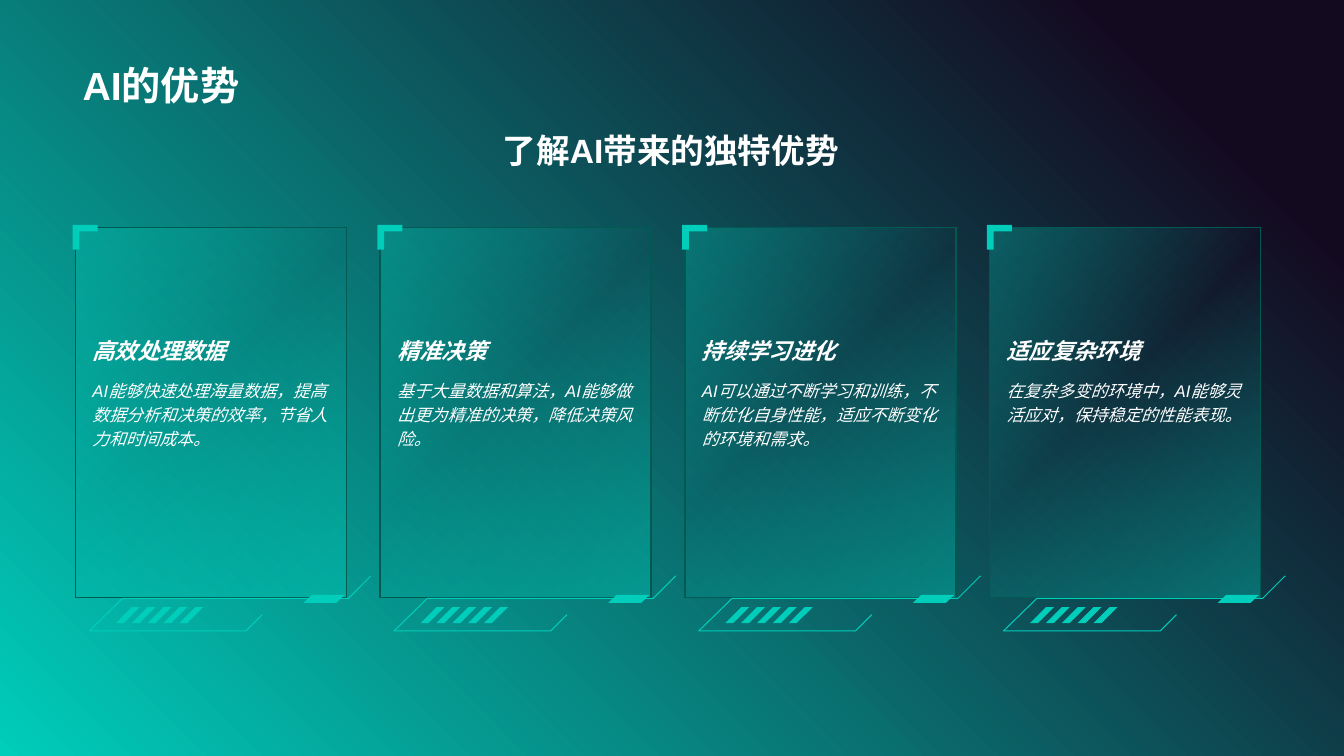
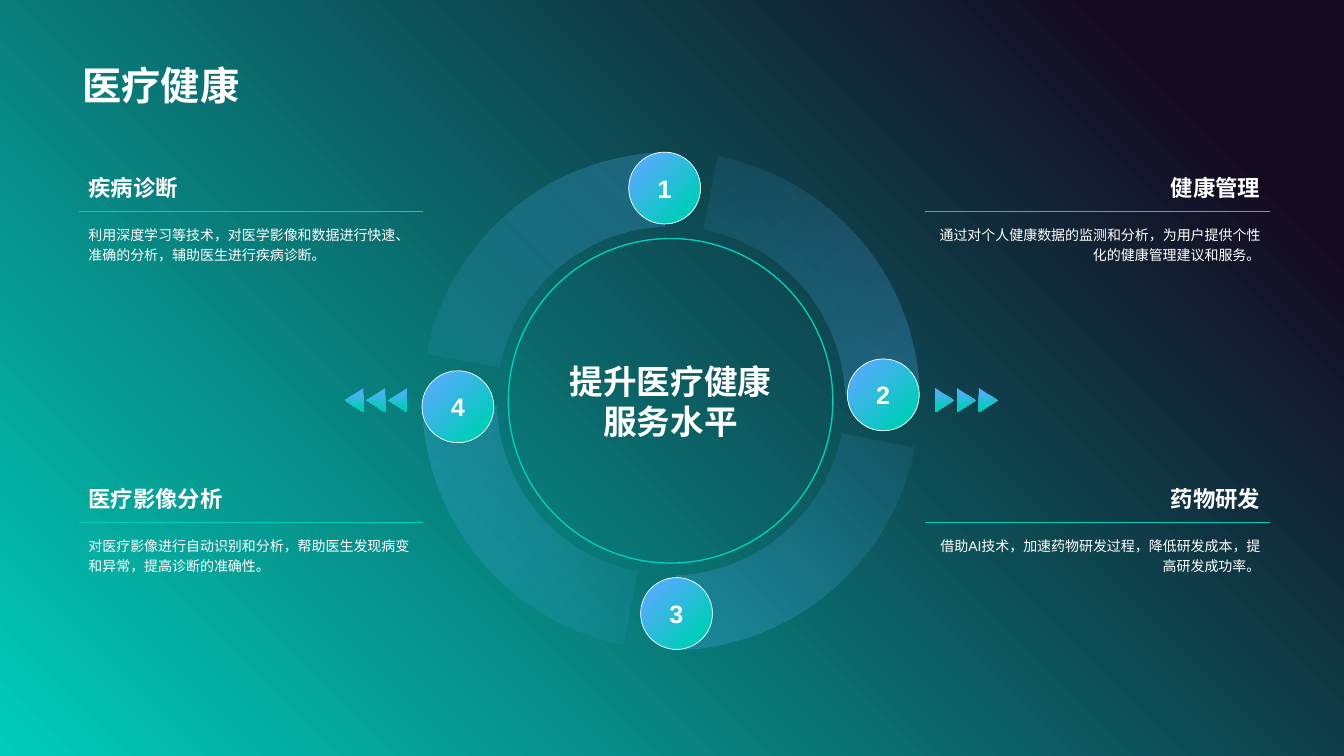
"""Build two dark teal slides: the advantages of AI and AI in health care."""
from lxml import etree
from pptx import Presentation
from pptx import util as u
from pptx.dml.color import RGBColor
from pptx.enum import shapes, text
from pptx.oxml.ns import qn

TEAL, BLUE, NIGHT, FOREST, WHITE = "00CDBA", "4BB0F4", "140A20", "005A52", "FFFFFF"
FONT, CENTER_FONT = "Arial", "Noto Sans CJK SC"
LEFT, CENTER, RIGHT = text.PP_ALIGN.LEFT, text.PP_ALIGN.CENTER, text.PP_ALIGN.RIGHT
TOP, MIDDLE, BOTTOM = (text.MSO_ANCHOR.TOP, text.MSO_ANCHOR.MIDDLE,
                       text.MSO_ANCHOR.BOTTOM)

BACKGROUND = [(0, TEAL, 100), (88, NIGHT, 100)]
CARD_GLOW = [(0, TEAL, 39), (55, TEAL, 0), (100, TEAL, 32)]
ARC_FADE = [(10, BLUE, 0), (100, BLUE, 40)]
BLUE_TO_TEAL = [(22, BLUE, 100), (81, TEAL, 100)]

ADVANTAGES_TITLE = "AI的优势"
ADVANTAGES_SUBTITLE = "了解AI带来的独特优势"
ADVANTAGES = [
    ("高效处理数据", "AI能够快速处理海量数据，提高数据分析和决策的效率，节省人力和时间成本。"),
    ("精准决策", "基于大量数据和算法，AI能够做出更为精准的决策，降低决策风险。"),
    ("持续学习进化", "AI可以通过不断学习和训练，不断优化自身性能，适应不断变化的环境和需求。"),
    ("适应复杂环境", "在复杂多变的环境中，AI能够灵活应对，保持稳定的性能表现。"),
]
HEALTH_TITLE = "医疗健康"
HEALTH_CENTER = "提升医疗健康服务水平"
HEALTH_TOPICS = [
    ("疾病诊断", "利用深度学习等技术，对医学影像和数据进行快速、准确的分析，辅助医生进行疾病诊断。", 0, 0),
    ("健康管理", "通过对个人健康数据的监测和分析，为用户提供个性化的健康管理建议和服务。", 1, 0),
    ("药物研发", "借助AI技术，加速药物研发过程，降低研发成本，提高研发成功率。", 1, 1),
    ("医疗影像分析", "对医疗影像进行自动识别和分析，帮助医生发现病变和异常，提高诊断的准确性。", 0, 1),
]

CARD_LEFT, CARD_PITCH, CARD_TOP, CARD_WIDTH, CARD_HEIGHT = 1.9, 7.68, 5.74, 6.83, 9.32
STRIPE = [(0.2, 0.4), (0, 0.4), (0.4, 0), (0.6, 0)]
TAB = [(0.83, 0.2), (0, 0.2), (0.21, 0), (1.04, 0)]
RAIL = [(4.71, 15.49), (4.3, 15.9), (0.35, 15.9), (1.19, 15.08), (6.88, 15.08), (7.45, 14.51)]
CORNER = [(0.56, 0), (0, 0), (0, 0.62), (0.17, 0.62), (0.17, 0.16), (0.63, 0.16), (0.63, 0)]
RING_X, RING_Y, RING_SIZE, INNER_SIZE, BADGE_SIZE = 16.9, 10.1, 12.52, 8.18, 1.81
TOPIC_LEFTS, TOPIC_TOP, TOPIC_PITCH, TOPIC_WIDTH = (1.98, 23.32), 3.18, 7.84, 8.69


def color(value):
    return RGBColor.from_string(value)


def box(left, top, width, height):
    return [u.Cm(value) for value in (left, top, width, height)]


def centered(x, y, size):
    return box(x - size / 2, y - size / 2, size, size)


def shift(points, x, y):
    return [(x + dx, y + dy) for dx, dy in points]


def set_gradient(fill, element, stops, angle=None):
    """Fill with (position, colour, opacity) stops, linear or from the lower right corner."""
    fill.gradient()
    gradient = next(element.iter(qn("a:gradFill")))
    for child in list(gradient):
        gradient.remove(child)
    gradient.set("rotWithShape", "1")
    stop_list = etree.SubElement(gradient, qn("a:gsLst"))
    for position, value, opacity in stops:
        stop = etree.SubElement(stop_list, qn("a:gs"), pos=str(position * 1000))
        paint = etree.SubElement(stop, qn("a:srgbClr"), val=value)
        if opacity < 100:
            etree.SubElement(paint, qn("a:alpha"), val=str(opacity * 1000))
    if angle is None:
        focus = etree.SubElement(gradient, qn("a:path"), path="circle")
        etree.SubElement(focus, qn("a:fillToRect"), l="100000", t="100000")
    else:
        etree.SubElement(gradient, qn("a:lin"), ang=str(angle * 60000), scaled="0")


def style(shape, fill=None, gradient=None, angle=None, line=None, width=1):
    shape.shadow.inherit = False
    if gradient:
        set_gradient(shape.fill, shape._element, gradient, angle)
    elif fill:
        shape.fill.solid()
        shape.fill.fore_color.rgb = color(fill)
    else:
        shape.fill.background()
    if line:
        shape.line.color.rgb = color(line)
        shape.line.width = u.Pt(width)
    else:
        shape.line.fill.background()
    return shape


def write(shape, words, size, bold=False, italic=False, align=LEFT, anchor=TOP,
          spacing=None, font=FONT, wrap=True):
    frame = shape.text_frame
    frame.word_wrap = wrap
    frame.vertical_anchor = anchor
    frame.text = words
    paragraph = frame.paragraphs[0]
    paragraph.alignment = align
    if spacing:
        paragraph.line_spacing = spacing
    paragraph.font.name = font
    paragraph.font.size = u.Pt(size)
    paragraph.font.bold = bold
    paragraph.font.italic = italic
    paragraph.font.color.rgb = color(WHITE)


def add_text(slide, area, words, size, **options):
    write(slide.shapes.add_textbox(*area), words, size, **options)


def add_outline(slide, contours, close=True, **options):
    contours = [[(u.Cm(x), u.Cm(y)) for x, y in points] for points in contours]
    builder = slide.shapes.build_freeform(*contours[0][0])
    for index, points in enumerate(contours):
        if index:
            builder.move_to(*points[0])
        builder.add_line_segments(points[1:], close=close)
    return style(builder.convert_to_shape(), **options)


def add_slide(presentation, layout, title):
    slide = presentation.slides.add_slide(layout)
    write(slide.shapes.title, title, 28, bold=True, anchor=BOTTOM)
    return slide


def add_card(slide, left, heading, body):
    card = slide.shapes.add_shape(shapes.MSO_SHAPE.RECTANGLE,
                                  *box(left, CARD_TOP, CARD_WIDTH, CARD_HEIGHT))
    style(card, gradient=CARD_GLOW, line=FOREST)
    for index in range(5):
        add_outline(slide, [shift(STRIPE, left + 1.02 + 0.4 * index, 15.3)], fill=TEAL)
    add_outline(slide, [shift(TAB, left + 5.75, 14.99)], fill=TEAL)
    add_outline(slide, [shift(RAIL, left, 0)], close=False, line=TEAL, width=0.75)
    add_outline(slide, [shift(CORNER, left - 0.07, 5.67)], fill=TEAL)
    add_text(slide, box(left + 0.18, 7.32, 6.45, 1.98), heading, 16,
             bold=True, italic=True, anchor=BOTTOM)
    add_text(slide, box(left + 0.18, 9.37, 6.45, 4.04), body, 12, italic=True, spacing=1.2)


def add_chevrons(slide, base, direction):
    contours = []
    for index in range(3):
        x = base + direction * 0.55 * index
        contours.append([(x, 9.78), (x, 10.39), (x + direction * 0.47, 10.09)])
    add_outline(slide, contours, gradient=BLUE_TO_TEAL, angle=90)


def add_topic(slide, heading, body, column, row):
    left, top = TOPIC_LEFTS[column], TOPIC_TOP + row * TOPIC_PITCH
    align = (LEFT, RIGHT)[column]
    rule = slide.shapes.add_connector(
        shapes.MSO_CONNECTOR.STRAIGHT, u.Cm(left), u.Cm(top + 2.15),
        u.Cm(left + TOPIC_WIDTH), u.Cm(top + 2.15))
    rule.line.color.rgb = color(TEAL)
    rule.line.width = u.Pt(0.5)
    etree.SubElement(rule._element.spPr, qn("a:effectLst"))
    add_text(slide, box(left, top, TOPIC_WIDTH, 2.01), heading, 16,
             bold=True, align=align, anchor=BOTTOM)
    add_text(slide, box(left, top + 2.31, TOPIC_WIDTH, 3.71), body, 10,
             align=align, spacing=1.2)


def add_ring(slide):
    circle = slide.shapes.add_shape(shapes.MSO_SHAPE.OVAL,
                                    *centered(RING_X, RING_Y, INNER_SIZE))
    style(circle, line=TEAL)
    write(circle, HEALTH_CENTER, 24, bold=True, align=CENTER, anchor=MIDDLE, font=CENTER_FONT)
    x, y = -0.15, -5.36
    for index in range(4):
        arc = slide.shapes.add_shape(shapes.MSO_SHAPE.BLOCK_ARC,
                                     *centered(RING_X, RING_Y, RING_SIZE))
        for position, value in enumerate((114.57, 160.8, 0.15)):
            arc.adjustments[position] = value
        arc.rotation = 90 * index
        style(arc, gradient=ARC_FADE, angle=315)
        badge = slide.shapes.add_shape(shapes.MSO_SHAPE.OVAL,
                                       *centered(RING_X + x, RING_Y + y, BADGE_SIZE))
        style(badge, gradient=BLUE_TO_TEAL, angle=45, line=WHITE, width=0.5)
        write(badge, str(index + 1), 18, bold=True, align=CENTER, anchor=MIDDLE, wrap=False)
        x, y = -y, x


def main():
    presentation = Presentation()
    presentation.slide_width, presentation.slide_height = u.Cm(33.87), u.Cm(19.05)
    master = presentation.slide_master
    set_gradient(master.background.fill, master._element, BACKGROUND, 315)
    layout = presentation.slide_layouts.get_by_name("Title Only")
    title = layout.placeholders[0]
    title.left, title.top, title.width, title.height = box(1.83, 0.36, 30.18, 2.49)

    advantages = add_slide(presentation, layout, ADVANTAGES_TITLE)
    add_text(advantages, box(6.81, 3.15, 20.19, 2.11), ADVANTAGES_SUBTITLE, 24,
             bold=True, align=CENTER)
    for index, (heading, body) in enumerate(ADVANTAGES):
        add_card(advantages, CARD_LEFT + index * CARD_PITCH, heading, body)

    health = add_slide(presentation, layout, HEALTH_TITLE)
    add_ring(health)
    add_chevrons(health, 10.26, -1)
    add_chevrons(health, 23.57, 1)
    for topic in HEALTH_TOPICS:
        add_topic(health, *topic)

    presentation.save("out.pptx")


if __name__ == "__main__":
    main()
